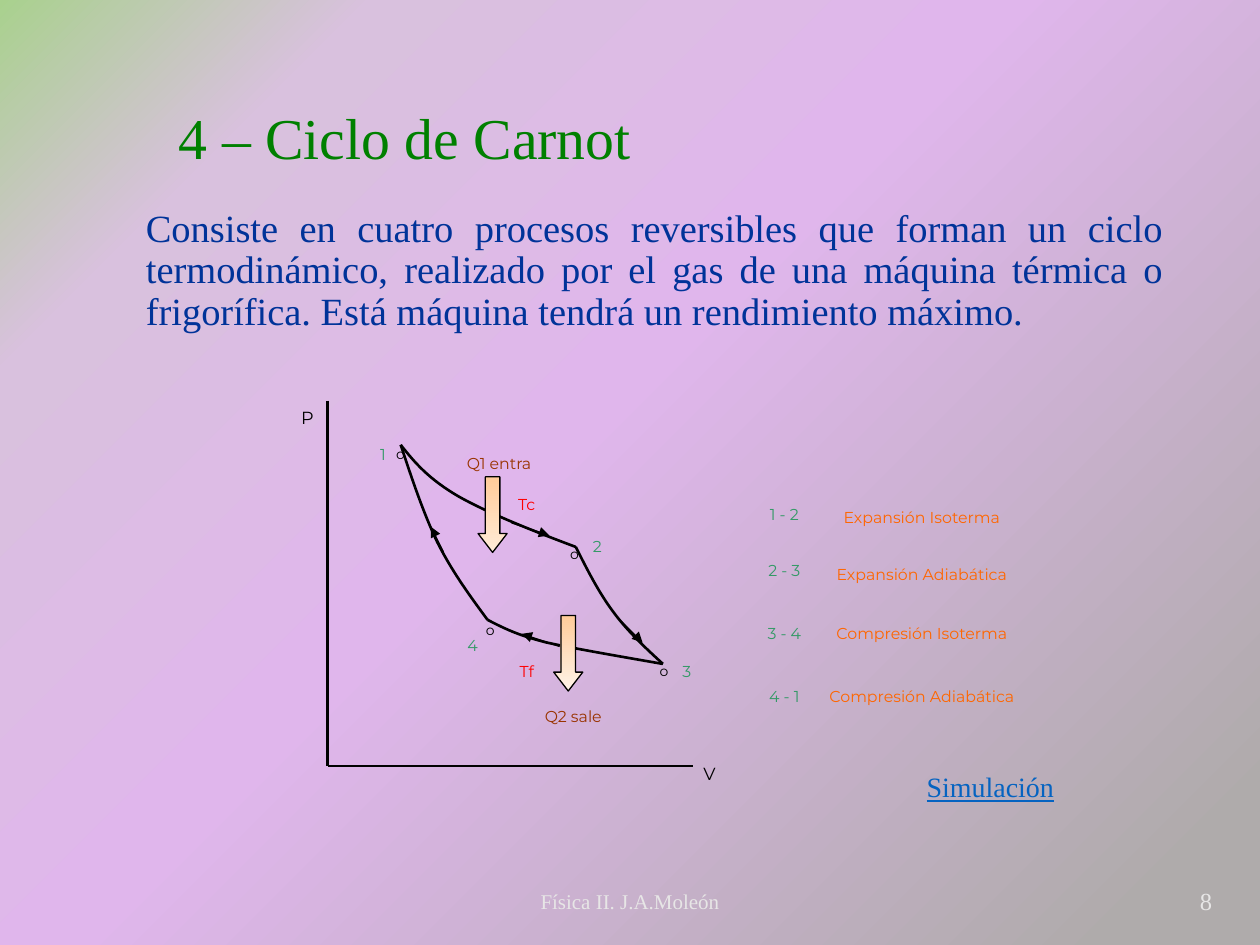
import pptx
import pptx.util
import pptx.dml.color
import pptx.enum.shapes
import pptx.enum.text
import pptx.oxml.ns
from lxml import etree

Pt = pptx.util.Pt
RGB = pptx.dml.color.RGBColor
ALIGN = pptx.enum.text.PP_ALIGN
MIDDLE = pptx.enum.text.MSO_ANCHOR.MIDDLE
qn = pptx.oxml.ns.qn

SERIF, SANS = "Times New Roman", "Montserrat"
BLACK = RGB(0x00, 0x00, 0x00)
GREEN = RGB(0x00, 0x80, 0x00)
NAVY = RGB(0x00, 0x33, 0x99)
PALE = RGB(0xE7, 0xE6, 0xE6)
BLUE = RGB(0x05, 0x63, 0xC1)
TEAL = RGB(0x33, 0x99, 0x66)
BROWN = RGB(0x99, 0x33, 0x00)
RED = RGB(0xFF, 0x00, 0x00)
ORANGE = RGB(0xFF, 0x66, 0x00)

SKY = [(0, "A9D18E"), (17, "D9C1DE"), (46, "E0B6EC"), (93, "AFABAB"), (100, "AFABAB")]
TITLE = "4 – Ciclo de Carnot"
BODY = ("Consiste en cuatro procesos reversibles que forman un ciclo termodinámico, "
        "realizado por el gas de una máquina térmica o frigorífica. "
        "Está máquina tendrá un rendimiento máximo.")

# Corners of the cycle on the P-V plane
STATES = {1: (229, 254.2), 2: (329, 312.5), 3: (378.8, 379.4), 4: (278.6, 354.2)}
# Start, end, and the five points between them along two Bézier arcs
CURVES = [
    (1, 4, [(235.4, 273.6), (241.9, 293), (249.8, 309.6), (258.5, 326.9), (268.6, 340.6)]),
    (1, 2, [(236.9, 264.2), (244.8, 273.6), (262.1, 283.7), (278.6, 293), (303.8, 303.1)]),
    (4, 3, [(287.3, 358.6), (295.2, 362.9), (312.5, 367.2), (329, 370.8), (354.2, 375.1)]),
    (2, 3, [(335.5, 325.4), (342, 338.4), (350.6, 349.9), (358.6, 360.7), (368.6, 370.1)]),
]
AXES = [((187.2, 229), (187.2, 437.8)), ((187.2, 437.8), (396, 437.8))]
HEADS = [((292.3, 298.8), (313.9, 306)), ((352.8, 352.8), (367.2, 367.2)),
         ((253.4, 315.4), (246.2, 301)), ((319.7, 369.4), (298.1, 362.2))]
HEAT = [(303.1, 365, "FFF3E7"), (259.9, 285.8, "FFEBD7")]

# Text, colour, size, box
LABELS = [
    ("o", BLACK, 8, (224.6, 251.3, 8.6, 8.6)),
    ("o", BLACK, 8, (275.8, 351.4, 8.6, 8.6)),
    ("o", BLACK, 8, (375.1, 375.1, 8.6, 8.6)),
    ("o", BLACK, 8, (324, 308.2, 8.6, 8.6)),
    ("Q1 entra", BROWN, 9, (264.2, 255.6, 41.8, 13)),
    ("Q2 sale", BROWN, 9, (309.1, 400.3, 37, 13)),
    ("1", TEAL, 9, (216, 250.6, 5.8, 13)),
    ("2", TEAL, 9, (338.4, 303.1, 5.8, 13)),
    ("4", TEAL, 9, (267.1, 360, 5.8, 13)),
    ("3", TEAL, 9, (389.5, 374.4, 5.8, 13)),
    ("V", BLACK, 10, (401.8, 432.7, 7.2, 13.7)),
    ("P", BLACK, 10, (172.1, 229, 7.2, 13.7)),
    ("Tc", RED, 9, (294.5, 279.4, 13, 13)),
    ("Tf", RED, 9, (294.5, 374.4, 13, 13)),
]
# Step, its top, process, its top
LEGEND = [
    ("1 - 2", 285.1, "Expansión Isoterma", 286.6),
    ("2 - 3", 316.8, "Expansión Adiabática", 319),
    ("3 - 4", 352.8, "Compresión Isoterma", 352.8),
    ("4 - 1", 388.8, "Compresión Adiabática", 388.8),
]


def style(para, font, size, color, align):
    para.alignment = align
    para.font.name, para.font.size = font, Pt(size)
    para.font.color.rgb = color


def write(shapes, text, box, font, size, color, align=ALIGN.CENTER):
    item = shapes.add_textbox(*map(Pt, box))
    frame = item.text_frame
    frame.word_wrap = True
    para = frame.paragraphs[0]
    para.text = text
    style(para, font, size, color, align)
    return frame, para


def shade(fill, root, stops, angle):
    """Give a fill a linear gradient; the angle runs clockwise."""
    fill.gradient()
    fill.gradient_angle = 360 - angle
    grad = root.find(".//" + qn("a:gradFill"))
    grad.set("rotWithShape", "0")
    stage = grad.find(qn("a:gsLst"))
    for old in list(stage):
        stage.remove(old)
    for pos, color in stops:
        stop = etree.SubElement(stage, qn("a:gs"), pos=str(pos * 1000))
        etree.SubElement(stop, qn("a:srgbClr"), val=color)


def ink(line, width):
    line.color.rgb = BLACK
    line.width = Pt(width)


def link(shapes, start, end, width, head=False):
    item = shapes.add_connector(pptx.enum.shapes.MSO_CONNECTOR.STRAIGHT,
                                *map(Pt, start + end))
    ink(item.line, width)
    props = item.element.spPr
    if head:
        etree.SubElement(props.find(qn("a:ln")), qn("a:tailEnd"), type="triangle")
    etree.SubElement(props, qn("a:effectLst"))


def curve(shapes, points):
    """Draw Bézier arcs: a start, then three points for each arc."""
    first, *rest = [(Pt(x), Pt(y)) for x, y in points]
    form = shapes.build_freeform(*first)
    form.add_line_segments(rest, close=False)
    item = form.convert_to_shape()
    item.shadow.inherit = False
    item.fill.background()
    ink(item.line, 1.5)
    trace = item.element.find(".//" + qn("a:path"))
    steps = trace.findall(qn("a:lnTo"))
    for i in range(0, len(steps), 3):
        arc = etree.SubElement(trace, qn("a:cubicBezTo"))
        for step in steps[i:i + 3]:
            arc.append(step[0])
            trace.remove(step)


def main():
    deck = pptx.Presentation()
    deck.slide_width, deck.slide_height = Pt(720), Pt(540)
    slide = deck.slides.add_slide(deck.slide_layouts[5])
    shade(slide.background.fill, slide.element, SKY, 45)

    title = slide.shapes.title
    title.left, title.top, title.width, title.height = map(Pt, (95, 41.8, 565.2, 77.8))
    title.text_frame.text = TITLE
    title.text_frame.vertical_anchor = MIDDLE
    para = title.text_frame.paragraphs[0]
    style(para, SERIF, 33, GREEN, ALIGN.LEFT)
    para.line_spacing = 0.9

    _, para = write(slide.shapes, BODY, (76.3, 115.9, 595.4, 129.6),
                    SERIF, 22, NAVY, ALIGN.JUSTIFY)
    para.line_spacing, para.space_before = 0.9, Pt(7.5)

    for text, left, width, size, align in [
            ("Física II. J.A.Moleón", 238.3, 243.4, 12, ALIGN.CENTER),
            ("8", 660.2, 39.6, 14, ALIGN.RIGHT)]:
        frame, _ = write(slide.shapes, text, (left, 500.4, width, 28.8),
                         SERIF, size, PALE, align)
        frame.vertical_anchor = MIDDLE

    chart = slide.shapes.add_group_shape().shapes
    for start, end in AXES:
        link(chart, start, end, 1.5)
    for start, end, mid in CURVES:
        curve(chart, [STATES[start], *mid, STATES[end]])
    for left, top, tint in HEAT:
        arrow = chart.add_shape(pptx.enum.shapes.MSO_SHAPE.RIGHT_ARROW,
                                *map(Pt, (left, top, 43.2, 16.6)))
        arrow.rotation = 90
        arrow.adjustments[1] = 0.65
        arrow.shadow.inherit = False
        shade(arrow.fill, arrow.element, [(0, "FFCC99"), (100, tint)], 90)
        ink(arrow.line, 0.75)
    for start, end in HEADS:
        link(chart, start, end, 0.75, head=True)

    labels = list(LABELS)
    for step, high, name, top in LEGEND:
        labels += [(step, TEAL, 9, (436.3, high, 23.8, 13.7)),
                   (name, ORANGE, 9, (470.7, top, 112, 13))]
    for text, color, size, box in labels:
        frame, _ = write(chart, text, box, SANS, size, color)
        frame.margin_left = frame.margin_right = 0
        frame.word_wrap = False

    _, para = write(slide.shapes, "Simulación", (493.9, 436.3, 144, 26.6), SERIF, 16, BLUE)
    para.font.underline = True
    deck.save("out.pptx")


if __name__ == "__main__":
    main()
